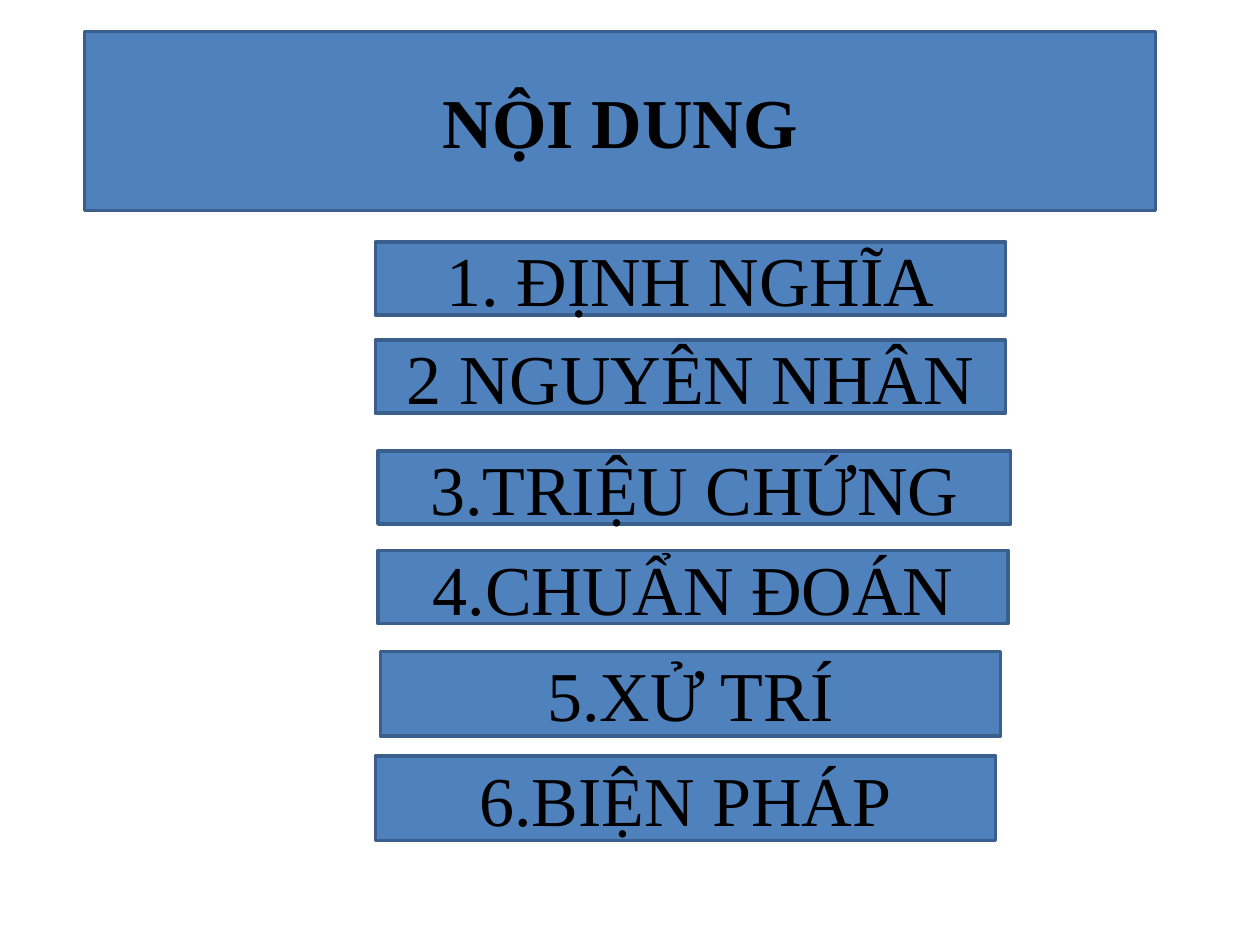
from pptx import Presentation
from pptx.dml.color import RGBColor
from pptx.enum.shapes import MSO_SHAPE
from pptx.enum.text import MSO_ANCHOR, PP_ALIGN
from pptx.util import Inches, Pt

BOX_FILL = RGBColor(0x4F, 0x81, 0xBD)
BOX_LINE = RGBColor(0x3A, 0x5F, 0x8C)
TEXT_COLOR = RGBColor(0, 0, 0)
FONT = "Times New Roman"

TITLE = ("NỘI DUNG", 0.67, 0.25, 8.5, 1.42)
TOPICS = [
    ("1. ĐỊNH NGHĨA", 2.98, 1.92, 5, 0.58),
    ("2 NGUYÊN NHÂN", 2.98, 2.7, 5, 0.58),
    ("3.TRIỆU CHỨNG", 3, 3.58, 5.02, 0.58),
    ("4.CHUẨN ĐOÁN", 3, 4.37, 5, 0.58),
    ("5.XỬ TRÍ", 3.02, 5.17, 4.92, 0.67),
    ("6.BIỆN PHÁP", 2.98, 6, 4.92, 0.67),
]


def add_box(s, text, left, top, width, height, bold=False):
    sp = s.shapes.add_shape(MSO_SHAPE.RECTANGLE, Inches(left), Inches(top),
                            Inches(width), Inches(height))
    sp.shadow.inherit = False
    sp.fill.solid()
    sp.fill.fore_color.rgb = BOX_FILL
    sp.line.color.rgb = BOX_LINE
    sp.line.width = Pt(2)
    tf = sp.text_frame
    tf.word_wrap = True
    tf.vertical_anchor = MSO_ANCHOR.MIDDLE
    p = tf.paragraphs[0]
    p.alignment = PP_ALIGN.CENTER
    r = p.add_run()
    r.text = text
    r.font.name = FONT
    r.font.size = Pt(40)
    r.font.bold = bold
    r.font.color.rgb = TEXT_COLOR


def main():
    prs = Presentation()
    prs.slide_width = Inches(10)
    prs.slide_height = Inches(7.5)
    s = prs.slides.add_slide(prs.slide_layouts[6])
    add_box(s, *TITLE, bold=True)
    for topic in TOPICS:
        add_box(s, *topic)
    prs.save("out.pptx")


if __name__ == "__main__":
    main()
